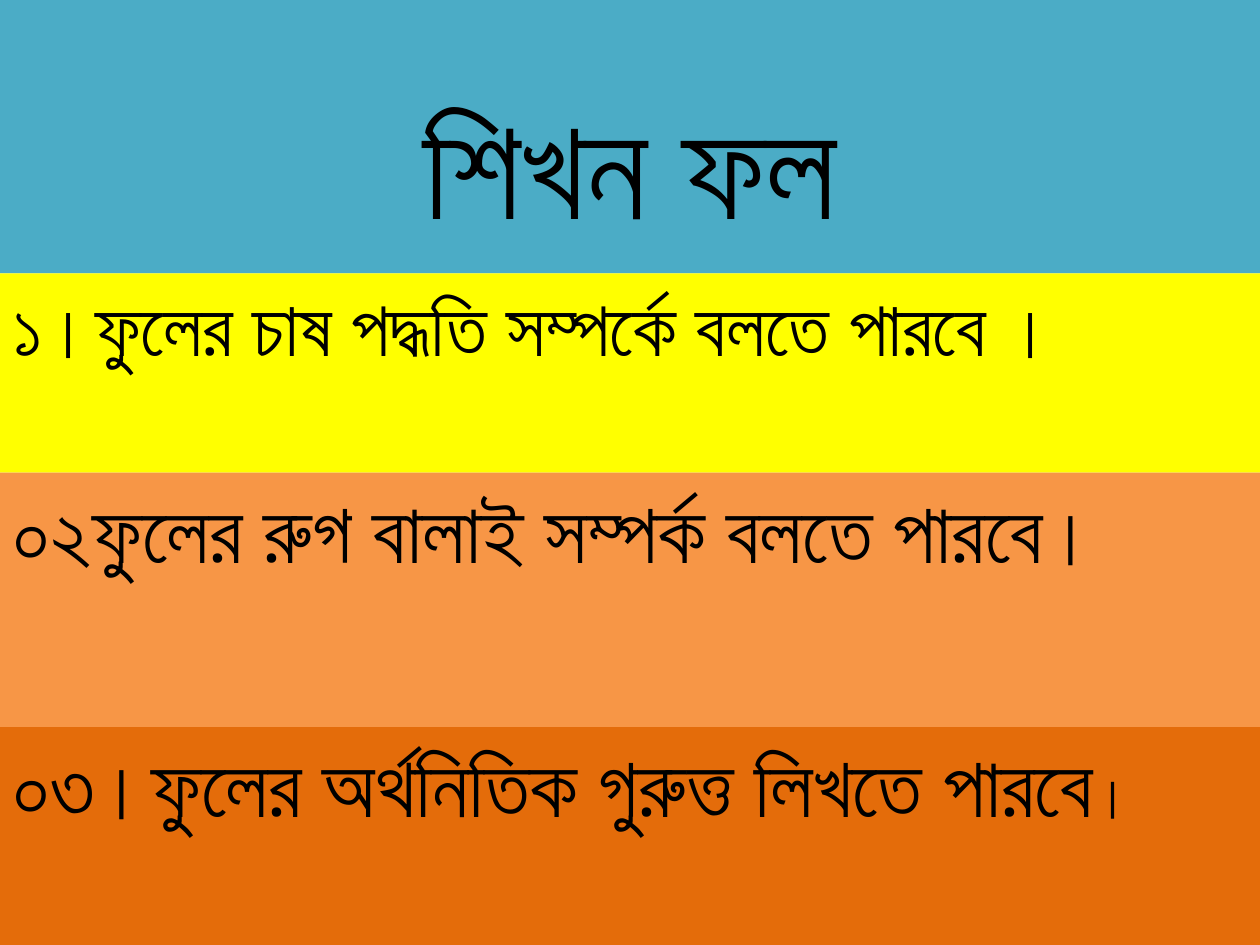
from dataclasses import dataclass
from itertools import pairwise
from lxml.etree import SubElement
from pptx import Presentation
from pptx.dml.color import RGBColor
from pptx.enum.text import MSO_ANCHOR, MSO_AUTO_SIZE, PP_ALIGN
from pptx.oxml.ns import qn
from pptx.util import Cm, Pt


@dataclass(frozen=True)
class Theme:
    ink: str = "000000"
    head: str = "4BACC6"
    bands: tuple = ("FFFF00", "F79646", "E46C0A")
    title: int = 80
    sizes: tuple = (44, 48, 48)
    small: int = 36
    face: str = "Calibri"
    text: str = "Lato"


THEME = Theme()
WIDTH, HEIGHT = 25.4, 19.05
EDGES = (5.51, 9.53, 14.66, HEIGHT)
LINES = (
    ("১।ফুলের চাষ পদ্ধতি সম্পর্কে বলতে পারবে ।",),
    ("০২ফুলের রুগ বালাই সম্পর্ক বলতে পারবে।",),
    ("০৩।ফুলের অর্থনিতিক গুরুত্ত লিখতে পারবে", "।"),
)


def place(shape, box, fill, inset):
    shape.left, shape.top, shape.width, shape.height = map(Cm, box)
    shape.fill.solid()
    shape.fill.fore_color.rgb = RGBColor.from_string(fill)
    frame = shape.text_frame
    frame.word_wrap = True
    frame.auto_size = MSO_AUTO_SIZE.NONE
    frame.vertical_anchor = MSO_ANCHOR.TOP
    frame.margin_left = frame.margin_right = Cm(0.25)
    frame.margin_top, frame.margin_bottom = Cm(inset), Cm(0)
    return frame


def style(run, face, size):
    font = run.font
    font.name, font.size, font.bold = face, Pt(size), False
    font.color.rgb = RGBColor.from_string(THEME.ink)


def header(shape, box):
    frame = place(shape, box, THEME.head, 1.6)
    frame.text = "শিখন ফল"
    para = frame.paragraphs[0]
    para.alignment = PP_ALIGN.CENTER
    style(para.runs[0], THEME.face, THEME.title)


def band(shape, box, fill, parts, size):
    frame = place(shape, box, fill, 0.13)
    frame.text = parts[0]
    para = frame.paragraphs[0]
    para.alignment = PP_ALIGN.LEFT
    para.space_before = Pt(0)
    props = para._p.get_or_add_pPr()
    props.set("marL", "0")
    props.set("indent", "0")
    SubElement(props, qn("a:buNone"))
    for part in parts[1:]:
        para.add_run().text = part
    for run, points in zip(para.runs, (size, THEME.small)):
        style(run, THEME.text, points)


def main():
    deck = Presentation()
    deck.slide_width, deck.slide_height = Cm(WIDTH), Cm(HEIGHT)
    slide = deck.slides.add_slide(deck.slide_layouts.get_by_name("Comparison"))
    title, *bodies = slide.placeholders
    header(title, (0, 0, WIDTH, EDGES[0]))
    rows = zip(bodies, pairwise(EDGES), THEME.bands, LINES, THEME.sizes)
    for shape, (top, end), fill, parts, size in rows:
        band(shape, (0, top, WIDTH, end - top), fill, parts, size)
    for spare in bodies[len(LINES):]:
        spare.element.getparent().remove(spare.element)
    deck.save("out.pptx")


if __name__ == "__main__":
    main()
